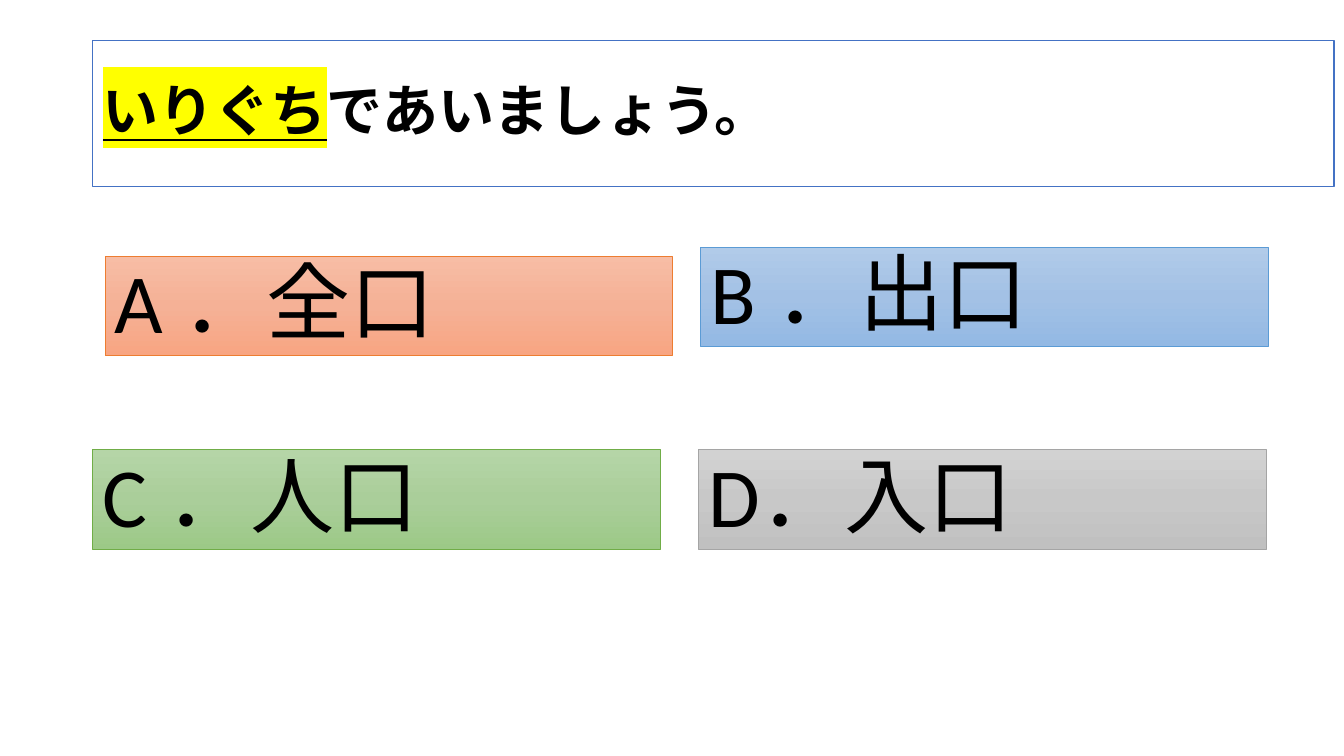
from copy import deepcopy

from lxml import etree
from pptx import Presentation
from pptx.dml.color import RGBColor
from pptx.enum import lang, shapes, text
from pptx.oxml.ns import qn
from pptx.util import Inches, Pt

FONT = "Calibri"
QUESTION = [("いりぐち", True), ("であいましょう。", False)]
QUESTION_AT = (0.92, 0.4, 12.31, 1.45)
ANSWER_SIZE = (5.63, 0.99)
ANSWERS = [  # text, left and top, gradient from top to bottom, line
    ("A ．全口", (1.04, 2.54), ("F7BDA5", "F5B196", "F8A582"), "ED7D31"),
    ("B ．出口", (6.95, 2.45), ("B1CBE9", "A3C1E5", "93B9E4"), "5B9BD5"),
    ("C ．人口", (0.92, 4.46), ("B5D5A7", "AACE9A", "9CC987"), "70AD47"),
    ("D．入口", (6.93, 4.46), ("D2D2D2", "C8C8C8", "C0C0C0"), "A5A5A5"),
]


def color(value):
    return RGBColor.from_string(value)


def place(box, left, top, width, height):
    box.left, box.top = Inches(left), Inches(top)
    box.width, box.height = Inches(width), Inches(height)


def outline(box, value, points):
    box.line.color.rgb = color(value)
    box.line.width = Pt(points)


def set_font(span, size):
    span.font.name = FONT
    span.font.size = Pt(size)
    span.font.color.rgb = color("000000")
    span.font.language_id = lang.MSO_LANGUAGE_ID.JAPANESE


def highlight(span, value):
    mark = etree.Element(qn("a:highlight"))
    etree.SubElement(mark, qn("a:srgbClr"), val=value)
    span.font._element.find(qn("a:latin")).addprevious(mark)


def fill_gradient(box, values):
    """Fill from top to bottom with three evenly spaced colours."""
    box.fill.gradient()
    box.fill.gradient_angle = 270
    first = box._element.spPr.find(".//" + qn("a:gs"))
    first.addnext(deepcopy(first))
    for index, (stop, value) in enumerate(zip(box.fill.gradient_stops, values)):
        stop.position = index / 2
        stop.color.rgb = color(value)


def set_frame(frame, anchor):
    frame.word_wrap = True
    frame.auto_size = text.MSO_AUTO_SIZE.NONE
    frame.vertical_anchor = anchor
    para = frame.paragraphs[0]
    para.alignment = text.PP_ALIGN.LEFT
    para.line_spacing = 0.9
    return para


def write_question(box):
    place(box, *QUESTION_AT)
    box.fill.solid()
    box.fill.fore_color.rgb = color("FFFFFF")
    outline(box, "4472C4", 1)
    para = set_frame(box.text_frame, text.MSO_ANCHOR.MIDDLE)
    for words, marked in QUESTION:
        span = para.add_run()
        span.text = words
        set_font(span, 40)
        span.font.bold = True
        span.font.underline = marked
        if marked:
            highlight(span, "FFFF00")


def write_answer(box, words, corner, gradient, line):
    place(box, *corner, *ANSWER_SIZE)
    fill_gradient(box, gradient)
    outline(box, line, 0.5)
    para = set_frame(box.text_frame, text.MSO_ANCHOR.TOP)
    para.text = words
    para.space_before = Pt(10)
    properties = para._p.get_or_add_pPr()
    properties.set("marL", "0")
    properties.set("indent", "0")
    etree.SubElement(properties, qn("a:buNone"))
    set_font(para.runs[0], 60)


def main():
    deck = Presentation()
    deck.slide_width, deck.slide_height = Inches(13.33), Inches(7.5)
    page = deck.slides.add_slide(deck.slide_layouts[1])
    write_question(page.shapes.title)
    for index, answer in enumerate(ANSWERS):
        if index == 0:
            box = page.placeholders[1]
        else:
            box = page.shapes.add_shape(shapes.MSO_SHAPE.RECTANGLE, 0, 0, 0, 0)
            box.shadow.inherit = False
        write_answer(box, *answer)
    deck.save("out.pptx")


if __name__ == "__main__":
    main()
